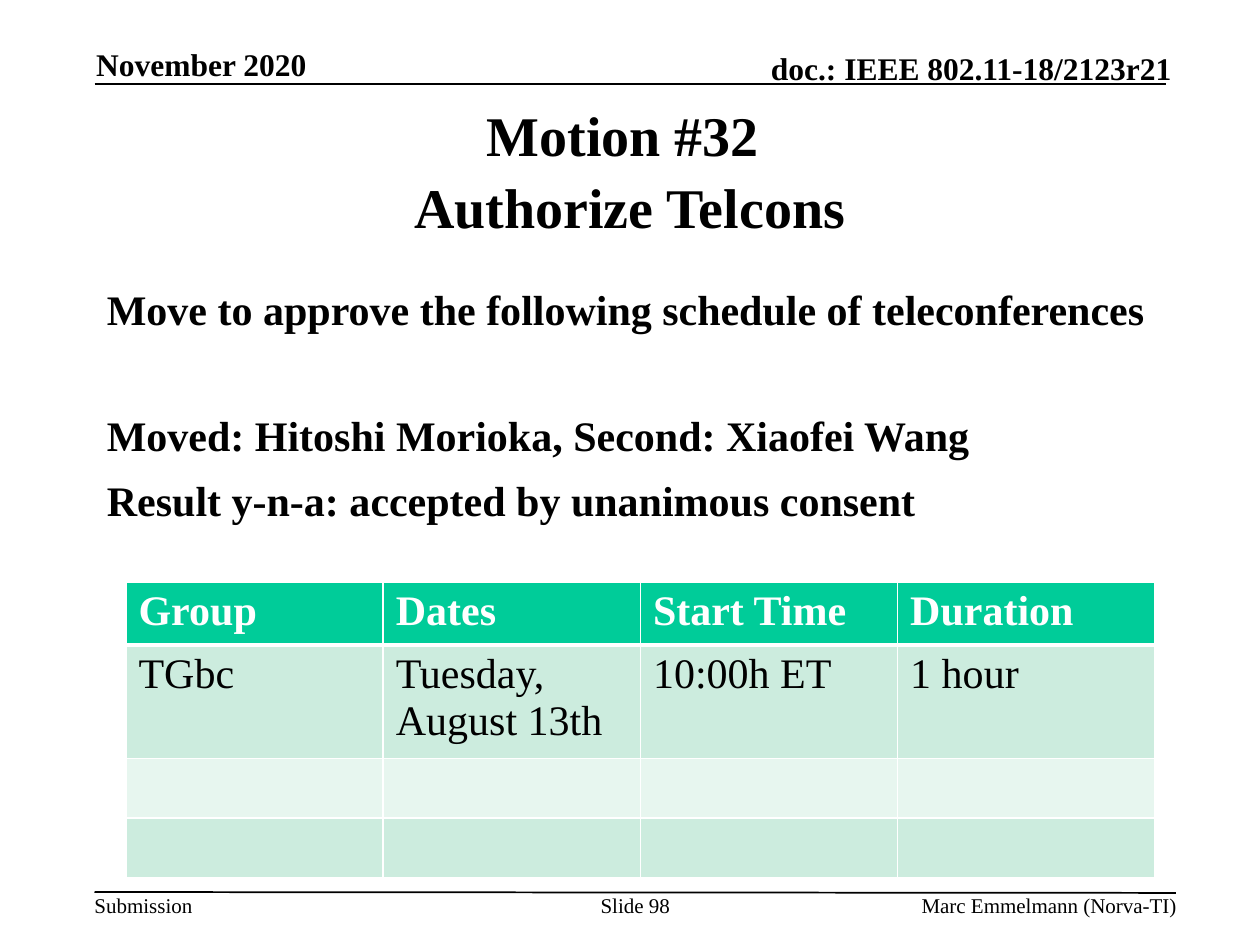
from lxml.etree import SubElement
from pptx import Presentation
from pptx.dml.color import RGBColor
from pptx.enum.shapes import MSO_CONNECTOR
from pptx.enum.text import MSO_ANCHOR as Anchor, PP_ALIGN as Align
from pptx.oxml.ns import qn
from pptx.util import Pt

FONT = "Times New Roman"
BLACK = RGBColor(0x00, 0x00, 0x00)
WHITE = RGBColor(0xFF, 0xFF, 0xFF)
GREEN = RGBColor(0x00, 0xCC, 0x99)
BAND_DARK = RGBColor(0xCC, 0xEC, 0xDE)
BAND_LIGHT = RGBColor(0xE7, 0xF6, 0xEF)

LOOSE = 1.08
HANGING = Pt(27)

MOTION = [  # text, space before in points
    ("Move to approve the following schedule of teleconferences", 0),
    ("Moved: Hitoshi Morioka, Second: Xiaofei Wang", 41),
    ("Result y-n-a: accepted by unanimous consent", 6),
]
SCHEDULE = [
    ["Group", "Dates", "Start Time", "Duration"],
    ["TGbc", "Tuesday, August 13th", "10:00h ET", "1 hour"],
    ["", "", "", ""],
    ["", "", "", ""],
]
ROW_HEIGHTS = [33.5, 59.5, 34, 34]
ROW_FILLS = [GREEN, BAND_DARK, BAND_LIGHT, BAND_DARK]


def add_span(para, text, size, bold=False, color=BLACK):
    span = para.add_run()
    span.text = text
    font = span.font
    font.name, font.size, font.bold = FONT, Pt(size), bold
    font.color.rgb = color


def set_margins(frame, side, top):
    frame.margin_left = frame.margin_right = Pt(side)
    frame.margin_top = frame.margin_bottom = Pt(top)


def add_box(page, left, top, width, height):
    box = page.shapes.add_textbox(Pt(left), Pt(top), Pt(width), Pt(height))
    box.text_frame.word_wrap = True
    return box.text_frame


def add_label(page, text, place, size, align=Align.LEFT, anchor=Anchor.TOP, bold=False):
    """Add one line of header or footer text in a box without margins."""
    frame = add_box(page, *place)
    set_margins(frame, 0, 0)
    frame.vertical_anchor = anchor
    para = frame.paragraphs[0]
    para.alignment = align
    add_span(para, text, size, bold)


def add_rule(page, left, top, right, bottom):
    rule = page.shapes.add_connector(
        MSO_CONNECTOR.STRAIGHT, Pt(left), Pt(top), Pt(right), Pt(bottom))
    rule.line.color.rgb = BLACK
    rule.line.width = Pt(1)
    SubElement(rule._element.spPr, qn("a:effectLst"))


def format_title(page):
    title = page.shapes.title
    title.left, title.top, title.width, title.height = Pt(54), Pt(54), Pt(612), Pt(83.5)
    frame = title.text_frame
    set_margins(frame, 7.2, 3.6)
    frame.vertical_anchor = Anchor.MIDDLE
    para = frame.paragraphs[0]
    para.alignment = Align.CENTER
    para.line_spacing = LOOSE
    add_span(para, "Motion #32 ", 32, bold=True)
    para.add_line_break()
    add_span(para, "Authorize Telcons", 32, bold=True)


def add_motion(page):
    frame = add_box(page, 54, 156, 612, 144)
    set_margins(frame, 7.2, 3.6)
    for index, (text, space) in enumerate(MOTION):
        para = frame.add_paragraph() if index else frame.paragraphs[0]
        properties = para._p.get_or_add_pPr()
        properties.set("marL", str(HANGING))
        properties.set("indent", str(-HANGING))
        para.line_spacing = LOOSE
        para.space_before = Pt(space)
        add_span(para, text, 24, bold=True)


def add_borders(cell, top, bottom):
    """Draw white borders; top and bottom widths are in points."""
    properties = cell._tc.get_or_add_tcPr()
    for side, width in (("L", 1), ("R", 1), ("T", top), ("B", bottom)):
        line = SubElement(properties, qn(f"a:ln{side}"), w=str(Pt(width)))
        fill = SubElement(line, qn("a:solidFill"))
        SubElement(fill, qn("a:srgbClr"), val=str(WHITE))


def add_schedule(page):
    table = page.shapes.add_table(
        len(SCHEDULE), len(SCHEDULE[0]), Pt(72), Pt(332.5), Pt(588), Pt(sum(ROW_HEIGHTS))).table
    for index, texts in enumerate(SCHEDULE):
        header = index == 0
        table.rows[index].height = Pt(ROW_HEIGHTS[index])
        for column, text in enumerate(texts):
            cell = table.cell(index, column)
            add_borders(cell, 3 if index == 1 else 1, 3 if header else 1)
            cell.fill.solid()
            cell.fill.fore_color.rgb = ROW_FILLS[index]
            if text:
                add_span(cell.text_frame.paragraphs[0], text, 24, header,
                         WHITE if header else BLACK)


def main():
    deck = Presentation()
    deck.slide_width, deck.slide_height = Pt(720), Pt(540)
    page = deck.slides.add_slide(deck.slide_layouts[5])

    add_rule(page, 54, 48, 666, 48)
    add_label(page, "November 2020", (55, 26, 147.5, 21.5), 18,
              anchor=Anchor.BOTTOM, bold=True)
    add_label(page, "doc.: IEEE 802.11-18/2123r21", (394, 28, 275.5, 21.5), 18,
              Align.RIGHT, Anchor.BOTTOM, bold=True)

    format_title(page)
    add_motion(page)
    add_schedule(page)

    add_rule(page, 54, 509.75, 672, 510.25)
    add_label(page, "Submission", (54, 510, 56, 14.5), 12)
    add_label(page, "Slide 98", (342, 510, 42, 28.5), 12, Align.CENTER)
    add_label(page, "Marc Emmelmann (Norva-TI)", (422, 510, 250.5, 14.5), 12, Align.RIGHT)

    deck.save("out.pptx")


if __name__ == "__main__":
    main()
